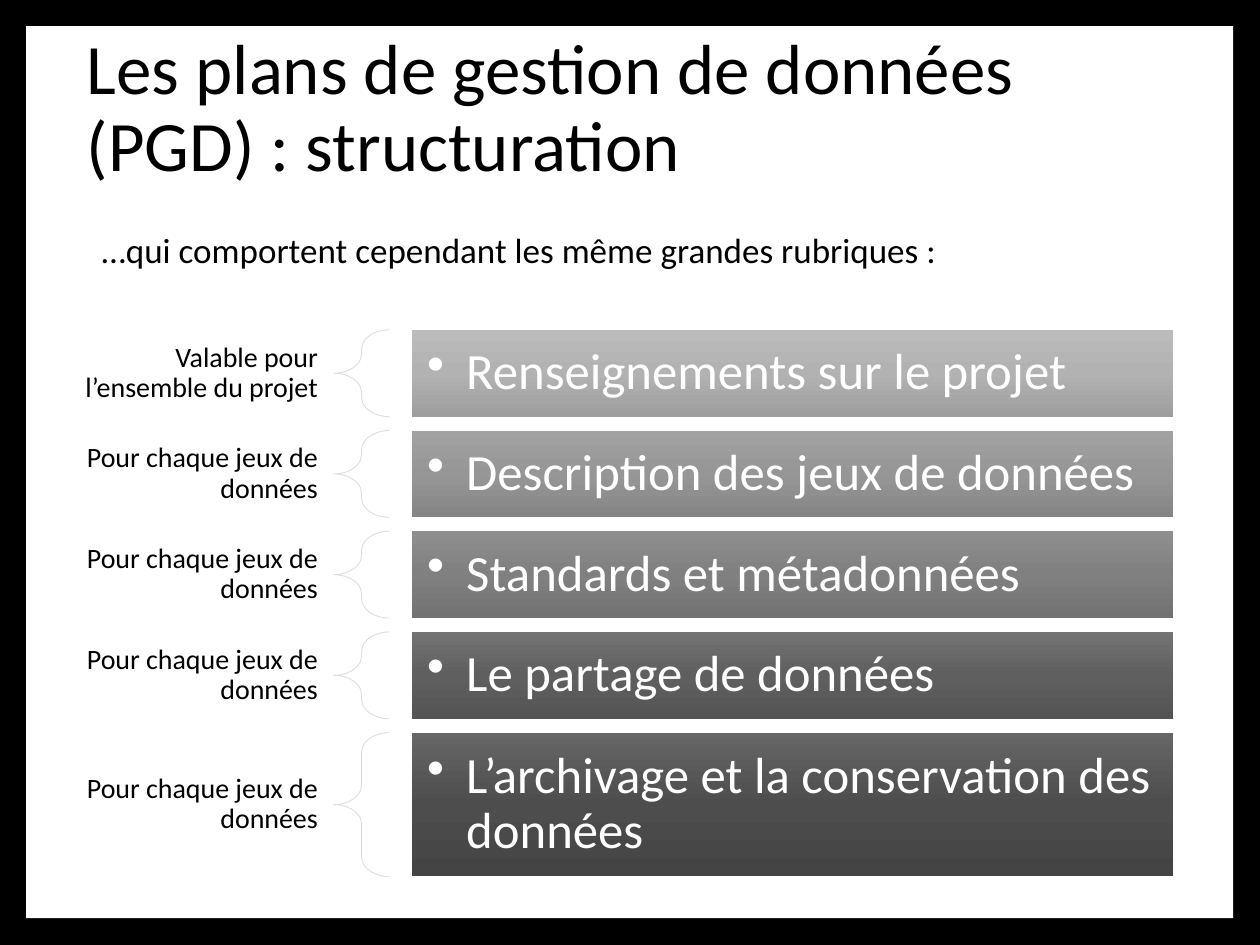
from copy import deepcopy
from dataclasses import dataclass

from pptx import Presentation
from pptx.dml.color import RGBColor
from pptx.enum.shapes import MSO_SHAPE as Preset
from pptx.enum.text import MSO_ANCHOR as Anchor, MSO_AUTO_SIZE as AutoSize, PP_ALIGN as Align
from pptx.oxml.ns import qn
from pptx.oxml.xmlchemy import OxmlElement
from pptx.util import Cm, Pt


@dataclass(frozen=True)
class Theme:
    font: str = "Calibri"
    backdrop: str = "000000"
    panel: str = "FFFFFF"
    text: str = "000000"
    bar_text: str = "FFFFFF"
    brace: str = "DDDDDD"
    title_size: float = 40.5
    intro_size: float = 20
    label_size: float = 16
    bar_size: float = 29


THEME = Theme()
EACH_DATASET = "Pour chaque jeux de données"

# scope, heading, bar height in cm, gradient from top to bottom
SECTIONS = [
    ("Valable pour l’ensemble du projet", "Renseignements sur le projet",
     1.75, ("BBBBBB", "B2B2B2", "9E9E9E")),
    (EACH_DATASET, "Description des jeux de données",
     1.75, ("A2A2A2", "969696", "858585")),
    (EACH_DATASET, "Standards et métadonnées",
     1.75, ("8E8E8E", "808080", "727272")),
    (EACH_DATASET, "Le partage de données",
     1.75, ("737373", "5F5F5F", "545454")),
    (EACH_DATASET, "L’archivage et la conservation des données",
     2.9, ("666666", "4D4D4D", "444444")),
]
FIRST_TOP, ROW_GAP, LABEL_HEIGHT = 6.65, 0.28, 1.6


def rgb(color):
    return RGBColor.from_string(color)


def place(shape, left, top, width, height):
    shape.left, shape.top = Cm(left), Cm(top)
    shape.width, shape.height = Cm(width), Cm(height)


def write(shape, wording, size, color, margins, anchor, align=Align.LEFT):
    """Fill the shape with one formatted paragraph; margins are (sides, top, bottom) in cm."""
    frame = shape.text_frame
    frame.text = wording
    frame.word_wrap = True
    frame.auto_size = AutoSize.NONE
    frame.vertical_anchor = anchor
    sides, top, bottom = map(Cm, margins)
    frame.margin_left = frame.margin_right = sides
    frame.margin_top, frame.margin_bottom = top, bottom
    paragraph = frame.paragraphs[0]
    paragraph.alignment = align
    paragraph.line_spacing = 0.9
    paragraph.space_before = Pt(0)
    font = paragraph.runs[0].font
    font.name, font.size = THEME.font, Pt(size)
    font.color.rgb = rgb(color)
    return paragraph


def set_bullet(paragraph, margin, indent, char=None):
    properties = paragraph._p.get_or_add_pPr()
    properties.set("marL", str(Cm(margin)))
    properties.set("indent", str(Cm(indent)))
    bullet = OxmlElement("a:buChar" if char else "a:buNone")
    if char:
        bullet.set("char", char)
    properties.append(bullet)


def fill_gradient(shape, colors):
    """Spread three colours evenly from top to bottom."""
    shape.fill.gradient()
    shape.fill.gradient_angle = 270
    stop_list = shape.element.spPr.find(".//" + qn("a:gsLst"))
    stop_list.insert(1, deepcopy(stop_list[0]))
    for stop, position, color in zip(shape.fill.gradient_stops, (0, 0.5, 1), colors):
        stop.position = position
        stop.color.rgb = rgb(color)


def add_preset(slide, preset, left, top, width, height):
    shape = slide.shapes.add_shape(preset, Cm(left), Cm(top), Cm(width), Cm(height))
    shape.shadow.inherit = False
    return shape


def add_panel(slide):
    """White sheet behind all the other elements."""
    panel = add_preset(slide, Preset.RECTANGLE, 0.53, 0.53, 24.33, 17.98)
    panel.fill.solid()
    panel.fill.fore_color.rgb = rgb(THEME.panel)
    panel.line.fill.background()
    slide.shapes.title.element.addprevious(panel.element)


def add_scope(slide, wording, middle):
    label = slide.shapes.add_textbox(
        Cm(1.07), Cm(middle - LABEL_HEIGHT / 2), Cm(5.64), Cm(LABEL_HEIGHT))
    write(label, wording, THEME.label_size, THEME.text,
          (0.3, 0.1, 0.1), Anchor.MIDDLE, Align.RIGHT)


def add_brace(slide, top, height):
    brace = add_preset(slide, Preset.LEFT_BRACE, 6.73, top, 1.12, height)
    brace.adjustments[0] = 0.35
    brace.fill.background()
    brace.line.color.rgb = rgb(THEME.brace)
    brace.line.width = Pt(0.5)


def add_bar(slide, heading, top, height, colors):
    bar = add_preset(slide, Preset.RECTANGLE, 8.31, top, 15.34, height)
    fill_gradient(bar, colors)
    bar.line.fill.background()
    paragraph = write(bar, heading, THEME.bar_size, THEME.bar_text,
                      (0.3, 0.3, 0.3), Anchor.MIDDLE)
    set_bullet(paragraph, 0.79, -0.79, "•")


def add_sections(slide):
    top = FIRST_TOP
    for scope, heading, height, colors in SECTIONS:
        add_scope(slide, scope, top + height / 2)
        add_brace(slide, top, height)
        add_bar(slide, heading, top, height, colors)
        top += height + ROW_GAP


def main():
    deck = Presentation()
    deck.slide_width, deck.slide_height = Cm(25.4), Cm(19.05)
    slide = deck.slides.add_slide(deck.slide_layouts[1])
    slide.background.fill.solid()
    slide.background.fill.fore_color.rgb = rgb(THEME.backdrop)
    add_panel(slide)

    title, intro = slide.shapes.title, slide.placeholders[1]
    place(title, 1.75, 0.51, 21.9, 3.38)
    write(title, "Les plans de gestion de données (PGD) : structuration",
          THEME.title_size, THEME.text, (0, 0.13, 0.13), Anchor.BOTTOM)
    place(intro, 1.75, 4.45, 21.9, 15.44)
    opening = write(intro, "…qui comportent cependant les même grandes rubriques :",
                    THEME.intro_size, THEME.text, (0, 0.25, 0.13), Anchor.TOP)
    opening.space_before, opening.space_after = Pt(10), Pt(13.5)
    set_bullet(opening, 0.3, 0)

    add_sections(slide)
    deck.save("out.pptx")


if __name__ == "__main__":
    main()
